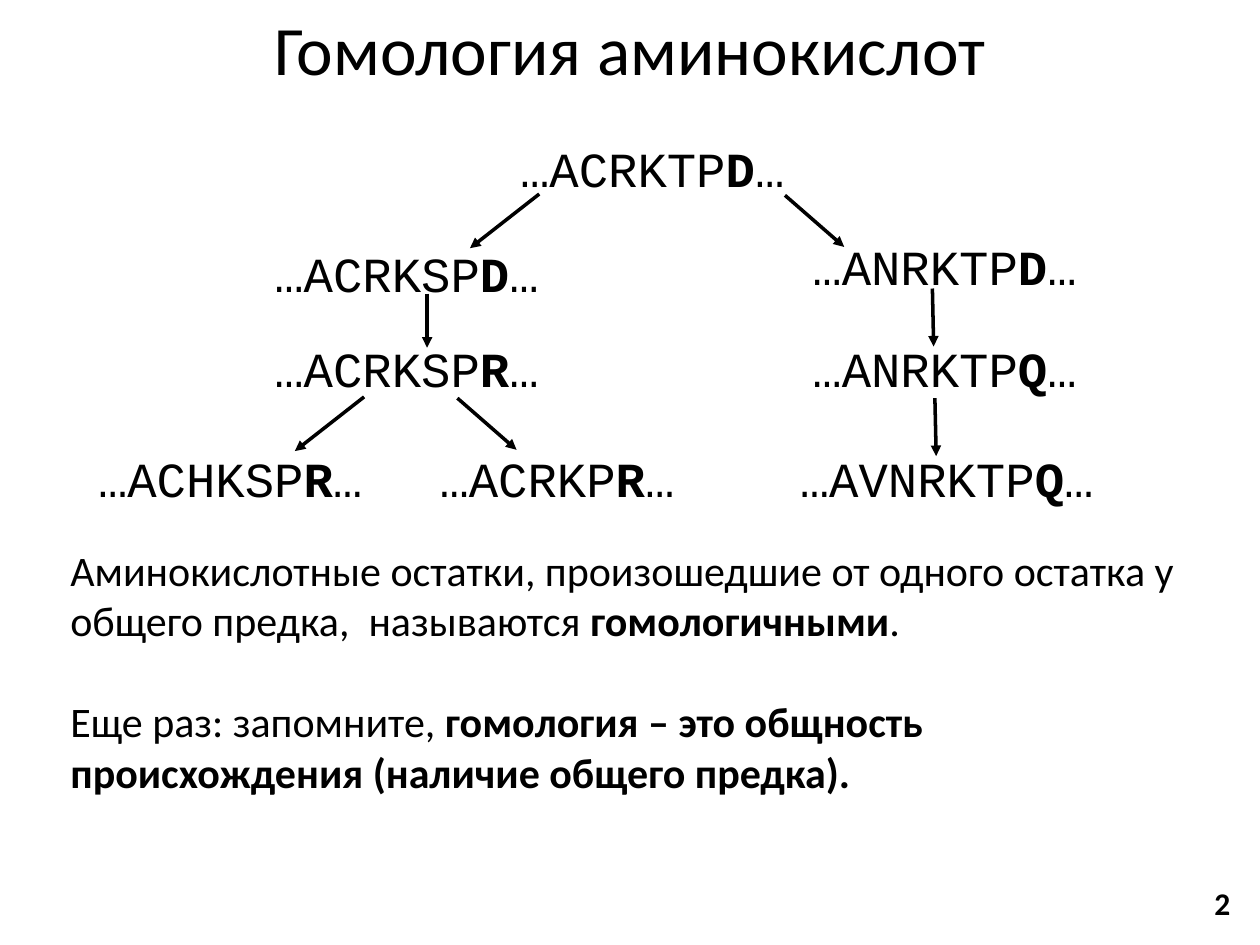
from lxml import etree
from pptx import Presentation
from pptx.dml.color import RGBColor
from pptx.enum.shapes import MSO_CONNECTOR
from pptx.enum.text import MSO_ANCHOR, MSO_AUTO_SIZE, PP_ALIGN
from pptx.oxml.ns import qn
from pptx.util import Inches, Pt

BLACK = RGBColor(0, 0, 0)
CHAR_WIDTH = 0.235  # Courier New at 28 pt
SIDE_INSETS = 0.2

# left, top, start of the sequence, highlighted residue
SEQUENCES = [
    (4.03, 1.05, "…ACRKTP", "D"),
    (2.08, 1.88, "…ACRKSP", "D"),
    (2.08, 2.64, "…ACRKSP", "R"),
    (0.68, 3.51, "…ACHKSP", "R"),
    (3.39, 3.51, "…ACRKP", "R"),
    (6.35, 1.83, "…ANRKTP", "D"),
    (6.35, 2.64, "…ANRKTP", "Q"),
    (6.25, 3.51, "…AVNRKTP", "Q"),
]

ARROWS = [
    (4.28, 1.54, 3.73, 1.97),
    (3.39, 2.33, 3.39, 2.76),
    (2.89, 3.15, 2.34, 3.58),
    (3.63, 3.16, 4.1, 3.57),
    (6.23, 1.55, 6.7, 1.96),
    (7.4, 2.29, 7.41, 2.75),
    (7.42, 3.16, 7.43, 3.62),
]

DEFINITIONS = [
    ["Аминокислотные остатки, произошедшие от одного остатка у общего предка,  называются ",
     "гомологичными", "."],
    ["Еще раз: запомните, ",
     "гомология – это общность происхождения (наличие общего предка)."],
]


def add_text(s, paragraphs, left, top, width, height, size, font="Calibri",
             wrap=False, grow=True, align=PP_ALIGN.LEFT,
             anchor=MSO_ANCHOR.TOP, gap=0):
    """Add a text box; the runs of each paragraph alternate plain and bold."""
    box = s.shapes.add_textbox(Inches(left), Inches(top), Inches(width), Inches(height))
    tf = box.text_frame
    tf.word_wrap = wrap
    tf.auto_size = MSO_AUTO_SIZE.SHAPE_TO_FIT_TEXT if grow else MSO_AUTO_SIZE.NONE
    tf.vertical_anchor = anchor
    for i, runs in enumerate(paragraphs):
        p = tf.add_paragraph() if i else tf.paragraphs[0]
        p.alignment = align
        p.space_before = Pt(gap if i else 0)
        for j, text in enumerate(runs):
            if not text:
                continue
            r = p.add_run()
            r.text = text
            r.font.name = font
            r.font.size = Pt(size)
            r.font.bold = j % 2 == 1
            r.font.color.rgb = BLACK


def add_sequence(s, left, top, start, residue):
    runs = [start, residue, "…"]
    width = SIDE_INSETS + CHAR_WIDTH * len("".join(runs))
    add_text(s, [runs], left, top, width, 0.57, 28, font="Courier New")


def add_arrow(s, x1, y1, x2, y2):
    line = s.shapes.add_connector(MSO_CONNECTOR.STRAIGHT, Inches(x1), Inches(y1),
                                  Inches(x2), Inches(y2))
    line.line.color.rgb = BLACK
    line.line.width = Pt(2)
    etree.SubElement(line.line._get_or_add_ln(), qn("a:tailEnd"), type="triangle")
    etree.SubElement(line._element.spPr, qn("a:effectLst"))


def main():
    prs = Presentation()
    prs.slide_width, prs.slide_height = Inches(10), Inches(7.5)
    s = prs.slides.add_slide(prs.slide_layouts[6])

    add_text(s, [["Гомология аминокислот"]], 0, 0, 10, 0.75, 39.6, wrap=True,
             grow=False, align=PP_ALIGN.CENTER, anchor=MSO_ANCHOR.MIDDLE)
    for sequence in SEQUENCES:
        add_sequence(s, *sequence)
    for arrow in ARROWS:
        add_arrow(s, *arrow)
    add_text(s, [["", "2"]], 9.54, 6.97, 0.33, 0.4, 18)
    add_text(s, DEFINITIONS, 0.46, 4.27, 9.09, 2.52, 24, wrap=True, gap=29)

    prs.save("out.pptx")


if __name__ == "__main__":
    main()
